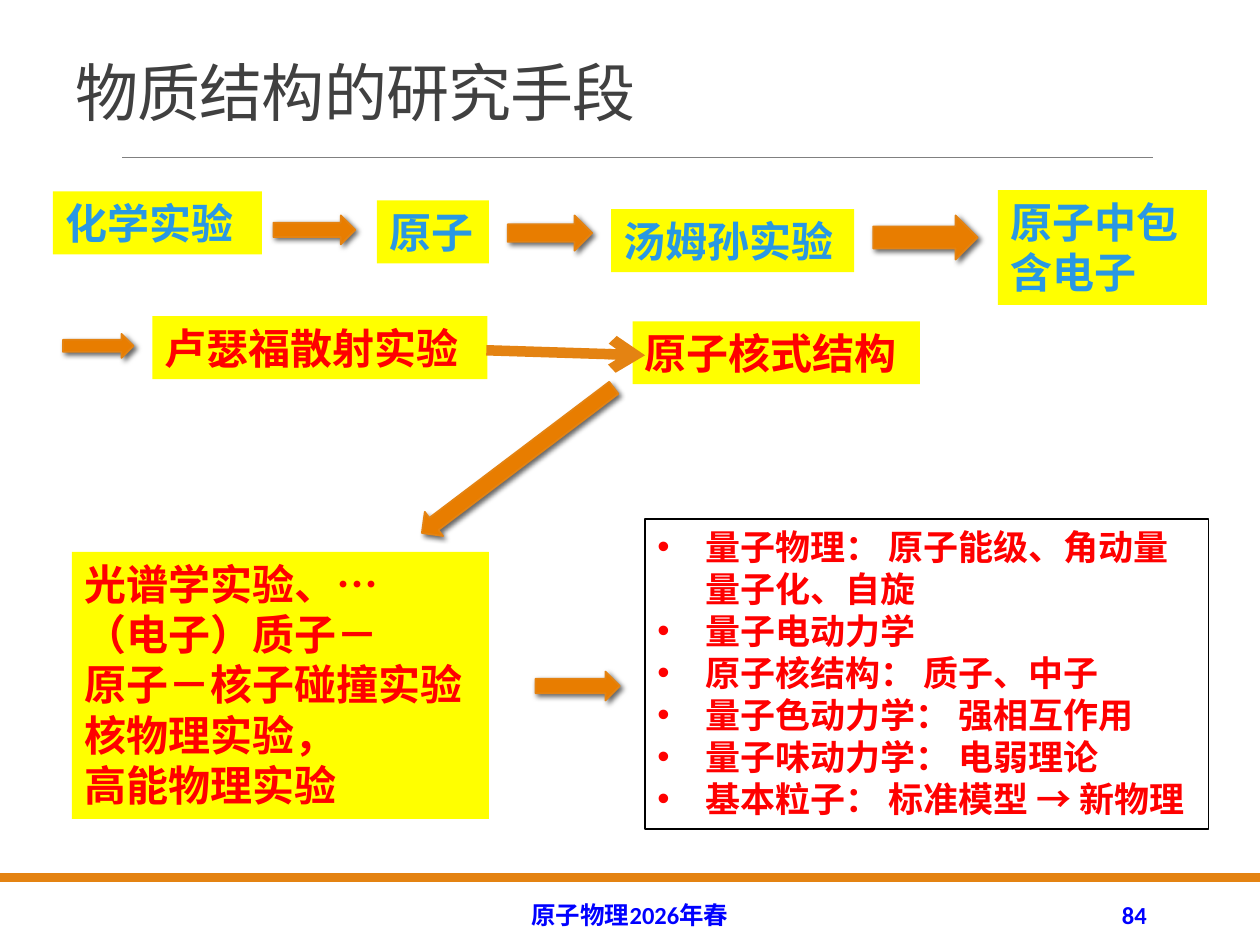
import pptx
import pptx.util
import pptx.dml.color
import pptx.enum.shapes
import pptx.enum.text
import pptx.oxml
import pptx.oxml.ns

# Grid of 100 columns by 75 rows; every length below is counted in cells
COLUMNS, ROWS = 100, 75
WIDTH, HEIGHT = pptx.util.Inches(10), pptx.util.Inches(7.5)
CELL = WIDTH // COLUMNS
CJK = "Noto Sans CJK SC"
ORANGE, YELLOW, RED, BLUE = "E48312", "FFFF00", "FF0000", "2998E3"
ALIGN = pptx.enum.text.PP_ALIGN
ANCHOR = pptx.enum.text.MSO_ANCHOR
SHAPE = pptx.enum.shapes.MSO_SHAPE
STRAIGHT = pptx.enum.shapes.MSO_CONNECTOR.STRAIGHT


def color(hex_string):
    return pptx.dml.color.RGBColor.from_string(hex_string)


def cells(*counts):
    return [round(count * CELL) for count in counts]


def within(box, left, top, width, height):
    return box[0] + left, box[1] + top, width, height


def add_xml(parent, xml):
    namespace = pptx.oxml.ns.nsdecls("a")
    element = pptx.oxml.parse_xml(xml.replace(" ", f" {namespace} ", 1))
    parent.append(element)


def write(shape, lines, size, text_color, font="Calibri", bold=False,
          align=ALIGN.LEFT, anchor=ANCHOR.TOP, bullets=False):
    frame = shape.text_frame
    frame.word_wrap = True
    frame.auto_size = pptx.enum.text.MSO_AUTO_SIZE.NONE
    frame.vertical_anchor = anchor
    frame.text = "\n".join(lines)
    for paragraph in frame.paragraphs:
        paragraph.alignment = align
        if bullets:
            properties = paragraph._p.get_or_add_pPr()
            indent = pptx.util.Inches(0.38)
            properties.set("marL", str(indent))
            properties.set("indent", str(-indent))
            add_xml(properties, '<a:buFont typeface="Arial"/>')
            add_xml(properties, '<a:buChar char="•"/>')
        for run in paragraph.runs:
            run.font.name = font
            run.font.size = pptx.util.Pt(size)
            run.font.bold = bold
            run.font.color.rgb = color(text_color)
            add_xml(run._r.get_or_add_rPr(), f'<a:ea typeface="{CJK}"/>')


def add_label(slide, box, lines, text_color):
    label = slide.shapes.add_textbox(*cells(*box))
    label.fill.solid()
    label.fill.fore_color.rgb = color(YELLOW)
    write(label, lines, 24, text_color, CJK, bold=True)


def add_arrow(slide, box, kind=SHAPE.RIGHT_ARROW):
    arrow = slide.shapes.add_shape(kind, *cells(*box))
    arrow.fill.solid()
    arrow.fill.fore_color.rgb = color("E87D00")
    arrow.line.color.rgb = color(ORANGE)
    arrow.line.width = pptx.util.Pt(1)
    add_xml(arrow._element.spPr,
            '<a:effectLst ><a:outerShdw blurRad="38100" dist="25400" '
            'dir="2700000" algn="tl" rotWithShape="0"><a:srgbClr val="000000">'
            '<a:alpha val="60000"/></a:srgbClr></a:outerShdw></a:effectLst>')
    return arrow


def add_line(slide, start, end, line_color, width):
    line = slide.shapes.add_connector(STRAIGHT, *cells(*start, *end))
    line.line.color.rgb = color(line_color)
    line.line.width = pptx.util.Pt(width)
    add_xml(line._element.spPr, '<a:effectLst />')
    return line


def build_title(slide, box, text):
    title = slide.shapes.title
    title.left, title.top, title.width, title.height = cells(*box)
    write(title, [text], 36, "404040", anchor=ANCHOR.BOTTOM)
    paragraph = title.text_frame.paragraphs[0]
    paragraph.line_spacing = 0.85
    paragraph.runs[0]._r.get_or_add_rPr().set("spc", "-50")
    rule_top = box[1] + box[3] + 1.7
    add_line(slide, (9.7, rule_top), (91.5, rule_top), "808080", 0.5)


def build_footer(slide, box, text, number):
    band = slide.shapes.add_shape(SHAPE.RECTANGLE, *cells(*box[:3], 0.7))
    band.shadow.inherit = False
    band.fill.solid()
    band.fill.fore_color.rgb = color(ORANGE)
    band.line.fill.background()
    for left, width, words, align in ((30.2, 39.6, text, ALIGN.CENTER),
                                      (81.2, 10.8, number, ALIGN.RIGHT)):
        field = slide.shapes.add_textbox(
            *cells(*within(box, left, 1.3, width, 4)))
        write(field, [words], 14, "0000FF", bold=True, align=align,
              anchor=ANCHOR.MIDDLE)


def build_atom_chain(slide, box):
    labels = [("化学实验", 0, 0.1, 16.6, 5), ("原子", 25.7, 0.8, 8.9, 5),
              ("汤姆孙实验", 44.3, 1.5, 19.3, 5),
              ("原子中包含电子", 75, 0, 16.6, 9.1)]
    for text, *place in labels:
        add_label(slide, within(box, *place), [text], BLUE)
    for left, width, height in ((17.5, 6.5, 2.3), (36.1, 6.7, 2.8),
                                (65.1, 8.3, 3.5)):
        add_arrow(slide, within(box, left, 2, width, height))


def build_nucleus_chain(slide, box):
    add_arrow(slide, within(box, 0, 1.4, 5.6, 1.9))
    add_label(slide, within(box, 7.1, 0, 26.6, 5), ["卢瑟福散射实验"], RED)
    add_label(slide, within(box, 45.2, 0.4, 22.8, 5), ["原子核式结构"], RED)
    start = within(box, 33.6, 2.7, 0, 0)[:2]
    end = within(box, 46.2, 3.1, 0, 0)[:2]
    link = add_line(slide, start, end, ORANGE, 6)
    add_xml(link.line._get_or_add_ln(), '<a:tailEnd type="arrow"/>')
    # Arrow leading down to the later experiments
    descent = add_arrow(slide, within(box, 34.9, 1.9, 2.4, 19.1),
                        SHAPE.DOWN_ARROW)
    descent.rotation = 52.9


def build_modern_physics(slide, box):
    experiments = ["光谱学实验、…", "（电子）质子－", "原子－核子碰撞实验",
                   "核物理实验，", "高能物理实验"]
    add_label(slide, within(box, 0, 2.6, 33.1, 21.2), experiments, RED)
    add_arrow(slide, within(box, 36.8, 12.1, 6.7, 2.3))
    theories = ["量子物理： 原子能级、角动量量子化、自旋", "量子电动力学",
                "原子核结构： 质子、中子", "量子色动力学： 强相互作用",
                "量子味动力学： 电弱理论", "基本粒子： 标准模型 → 新物理"]
    results = slide.shapes.add_textbox(
        *cells(*within(box, 45.5, 0, 44.7, 24.6)))
    results.line.color.rgb = color("000000")
    results.line.width = pptx.util.Pt(0.75)
    write(results, theories, 20, RED, CJK, bold=True, bullets=True)


def main():
    presentation = pptx.Presentation()
    presentation.slide_width, presentation.slide_height = WIDTH, HEIGHT
    slide = presentation.slides.add_slide(presentation.slide_layouts[5])
    build_footer(slide, (0, 69.3, COLUMNS, ROWS - 69.3),
                 "原子物理2026年春", "84")
    build_title(slide, (5, 0.6, 90.8, 10.2), "物质结构的研究手段")
    build_atom_chain(slide, (4.2, 15.1, 91.6, 9.1))
    build_nucleus_chain(slide, (5, 25.1, 68, 5.4))
    build_modern_physics(slide, (5.7, 41.2, 90.2, 24.6))
    presentation.save("out.pptx")


if __name__ == "__main__":
    main()
